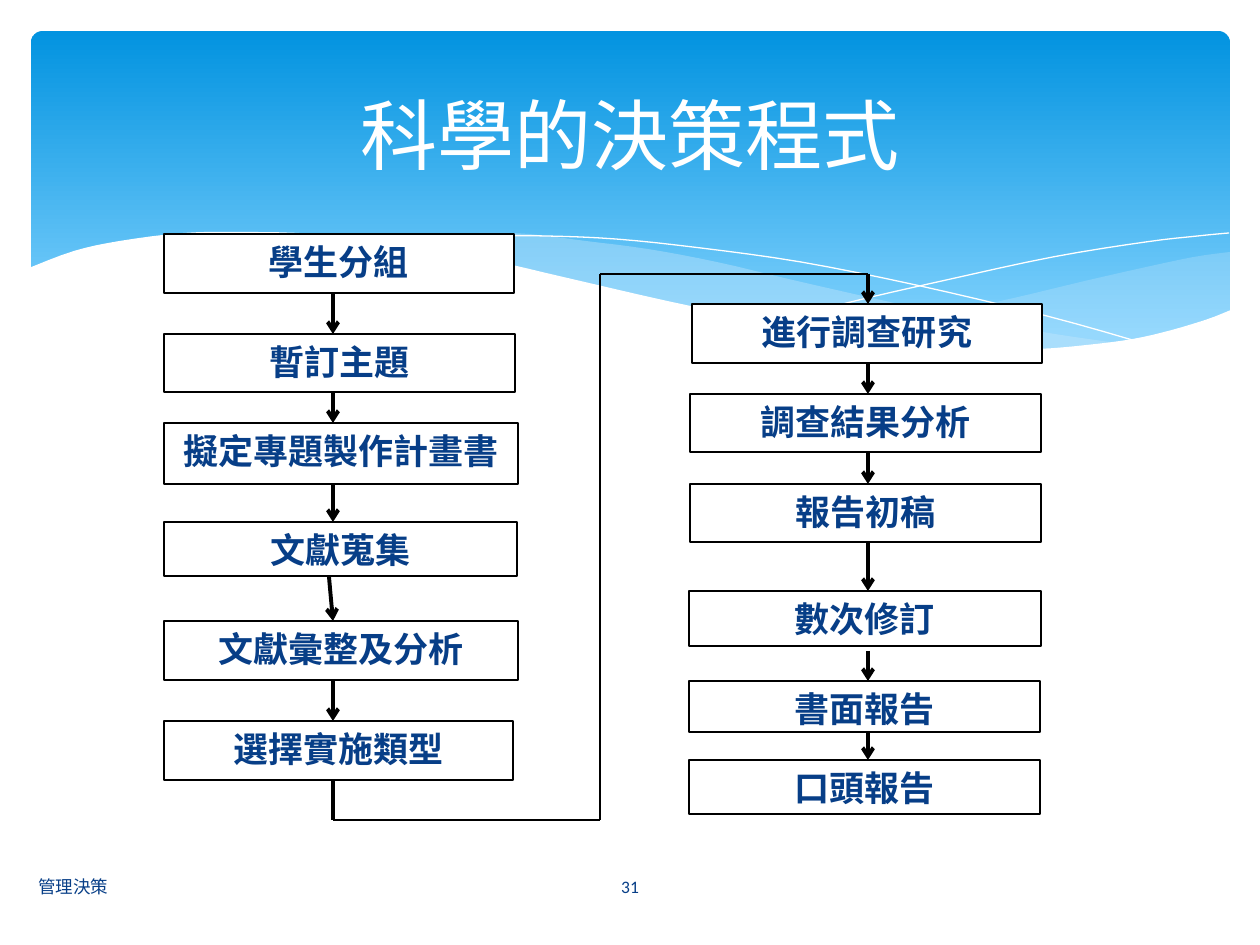
from lxml import etree
from pptx import Presentation
from pptx.dml.color import RGBColor
from pptx.enum.shapes import MSO_CONNECTOR, MSO_SHAPE
from pptx.enum.text import MSO_ANCHOR, PP_ALIGN
from pptx.oxml.ns import qn
from pptx.util import Pt

RECT, ROUNDED = MSO_SHAPE.RECTANGLE, MSO_SHAPE.ROUNDED_RECTANGLE
STRAIGHT = MSO_CONNECTOR.STRAIGHT
LEFT, CENTER = PP_ALIGN.LEFT, PP_ALIGN.CENTER
TOP, MIDDLE = MSO_ANCHOR.TOP, MSO_ANCHOR.MIDDLE
NAVY, BLACK, WHITE, PALE = "073E87", "000000", "FFFFFF", "C6E7FC"
BODY_FONT, BOX_FONT = "Calibri", "Noto Sans CJK SC"

# Content: steps as (text, left, top, width, height), arrow axis,
# and the arrow starts that do not sit under the box on the axis
TITLE = "科學的決策程式"
COLUMNS = [
    {"axis": 333, "starts": {3: (329, 577)}, "steps": [
        ("學生分組", 164, 234, 350, 59),
        ("暫訂主題", 164, 334, 351, 58),
        ("擬定專題製作計畫書", 164, 423, 354, 61),
        ("文獻蒐集", 164, 522, 353, 54),
        ("文獻彙整及分析", 164, 621, 354, 59),
        ("選擇實施類型", 164, 721, 349, 59)]},
    {"axis": 868, "starts": {3: (868, 651)}, "steps": [
        ("進行調查研究", 692, 304, 350, 59),
        ("調查結果分析", 690, 394, 351, 58),
        ("報告初稿", 690, 484, 351, 58),
        ("數次修訂", 689, 591, 352, 55),
        ("書面報告", 689, 681, 351, 51),
        ("口頭報告", 689, 760, 351, 54)]},
]
FOOTERS = [("管理決策", LEFT, 26, 522), ("31", CENTER, 550, 160)]

# Wave outlines: each edge is a list of points on a smooth curve
RIGHT_WAVE = [
    [(1230, 252), (1194, 257), (1142, 268), (1085, 281), (1014, 298),
     (949, 312), (889, 324), (833, 334)],
    [(833, 334), (888, 341), (939, 346), (983, 349), (1026, 350), (1064, 349),
     (1098, 346), (1130, 342), (1160, 334), (1187, 326), (1230, 311)]]
MIDDLE_WAVE = [
    [(360, 241), (413, 236), (479, 233), (529, 234), (586, 241), (648, 249),
     (717, 262), (793, 280), (890, 302), (976, 320), (1055, 334), (1125, 344)],
    [(1125, 344), (1081, 348), (1030, 350), (974, 349), (910, 345), (838, 335),
     (757, 321), (668, 302), (566, 280), (509, 266), (456, 256), (360, 241)]]
FALLING_LINE = [
    [(389, 246), (433, 239), (488, 236), (546, 236), (616, 239), (701, 248),
     (801, 262), (916, 285), (1047, 316), (1143, 343)]]
RISING_LINE = [
    [(772, 324), (847, 303), (942, 281), (1053, 257), (1146, 242),
     (1198, 236), (1229, 233)]]
WHITE_WAVE = [
    [(29, 268), (74, 251), (120, 241), (184, 233), (243, 232), (315, 234),
     (398, 244), (493, 261), (563, 277), (667, 301), (760, 320), (842, 334),
     (915, 343), (980, 348), (1037, 349), (1087, 345), (1133, 339),
     (1172, 330), (1208, 319), (1231, 310)],
    [(1231, 415), (29, 415)]]


def px(n):
    return round(n * 914400 / 126)


def rgb(color):
    return RGBColor.from_string(color)


def smooth(points, steps=4):
    """Points along a Catmull-Rom curve through the given points."""
    ends = [points[0], *points, points[-1]]
    curve = [points[0]]
    for a, b, c, d in zip(ends, ends[1:], ends[2:], ends[3:]):
        for i in range(1, steps + 1):
            t = i / steps
            curve.append(tuple(
                (2 * q + (r - p) * t + (2 * p - 5 * q + 4 * r - u) * t ** 2
                 + (3 * q - p - 3 * r + u) * t ** 3) / 2
                for p, q, r, u in zip(a, b, c, d)))
    return curve


def add_wave(edges, fill=None, opacity=100):
    points = [(px(x), px(y)) for edge in edges for x, y in smooth(edge)]
    builder = s.shapes.build_freeform(*points[0], scale=1.0)
    builder.add_line_segments(points[1:], close=fill is not None)
    sp = builder.convert_to_shape()
    sp.shadow.inherit = False
    if fill is None:
        sp.fill.background()
        sp.line.color.rgb = rgb(WHITE)
        sp.line.width = Pt(0)
        return
    sp.fill.solid()
    sp.fill.fore_color.rgb = rgb(fill)
    sp.line.fill.background()
    if opacity < 100:
        color = next(sp.element.iter(qn("a:srgbClr")))
        etree.SubElement(color, qn("a:alpha"), val=str(opacity * 1000))


def set_text(sp, text, size, color, align, anchor, font=BODY_FONT, bold=False):
    tf = sp.text_frame
    tf.word_wrap = True
    tf.vertical_anchor = anchor
    p = tf.paragraphs[0]
    p.text = text
    p.alignment = align
    p.font.size, p.font.bold, p.font.name = Pt(size), bold, font
    p.font.color.rgb = rgb(color)
    if font == BOX_FONT:
        props = next(sp.element.iter(qn("a:defRPr")))
        etree.SubElement(props, qn("a:ea"), typeface=font)


def add_box(text, *frame):
    sp = s.shapes.add_shape(RECT, *map(px, frame))
    sp.shadow.inherit = False
    sp.fill.solid()
    sp.fill.fore_color.rgb = rgb(WHITE)
    sp.line.color.rgb = rgb(BLACK)
    sp.line.width = Pt(0.75)
    set_text(sp, text, 20, NAVY, CENTER, TOP, BOX_FONT, True)


def add_line(start, end, width=2.25, arrow=False):
    line = s.shapes.add_connector(STRAIGHT, *map(px, (*start, *end)))
    line.line.color.rgb = rgb(BLACK)
    line.line.width = Pt(width)
    if arrow:
        ln = line.element.spPr.find(qn("a:ln"))
        etree.SubElement(ln, qn("a:tailEnd"), type="arrow")
    etree.SubElement(line.element.spPr, qn("a:effectLst"))


prs = Presentation()
prs.slide_width, prs.slide_height = px(1260), px(945)
s = prs.slides.add_slide(prs.slide_layouts[5])

# Gradient banner and waves
banner = s.shapes.add_shape(ROUNDED, *map(px, (31, 31, 1199, 340)))
banner.adjustments[0] = 0.034
banner.shadow.inherit = False
banner.line.fill.background()
banner.fill.gradient()
banner.fill.gradient_angle = 270
for stop, (position, color) in zip(banner.fill.gradient_stops,
                                   [(0, "0293E0"), (0.9, "83D3FE")]):
    stop.position, stop.color.rgb = position, rgb(color)
add_wave(RIGHT_WAVE, PALE, 29)
add_wave(MIDDLE_WAVE, PALE, 40)
add_wave(FALLING_LINE)
add_wave(RISING_LINE)
add_wave(WHITE_WAVE, WHITE)

# Title, brought in front of the banner
title = s.shapes.title
title.left, title.top, title.width, title.height = map(px, (63, 47, 1134, 173))
set_text(title, TITLE, 44, WHITE, CENTER, MIDDLE)
title.element.getparent().append(title.element)

# Steps, then arrows from each box to the next
for column in COLUMNS:
    for step in column["steps"]:
        add_box(*step)
for column in COLUMNS:
    axis, steps = column["axis"], column["steps"]
    for i, (step, following) in enumerate(zip(steps, steps[1:])):
        start = column["starts"].get(i, (axis, step[2] + step[4]))
        add_line(start, (axis, following[2]), arrow=True)

# Route from the last left step up to the first right step
left_x, right_x = (column["axis"] for column in COLUMNS)
mid_x, low_y, high_y = 600, 820, 274
add_line((left_x, 780), (left_x, low_y))
route = [(left_x, low_y), (mid_x, low_y), (mid_x, high_y), (right_x, high_y)]
for start, end in zip(route, route[1:]):
    add_line(start, end, 0.75)
add_line(route[-1], (right_x, 304), arrow=True)

# Footer and page number
for text, align, left, width in FOOTERS:
    box = s.shapes.add_textbox(*map(px, (left, 862, width, 50)))
    set_text(box, text, 10, NAVY, align, MIDDLE)

prs.save("out.pptx")
